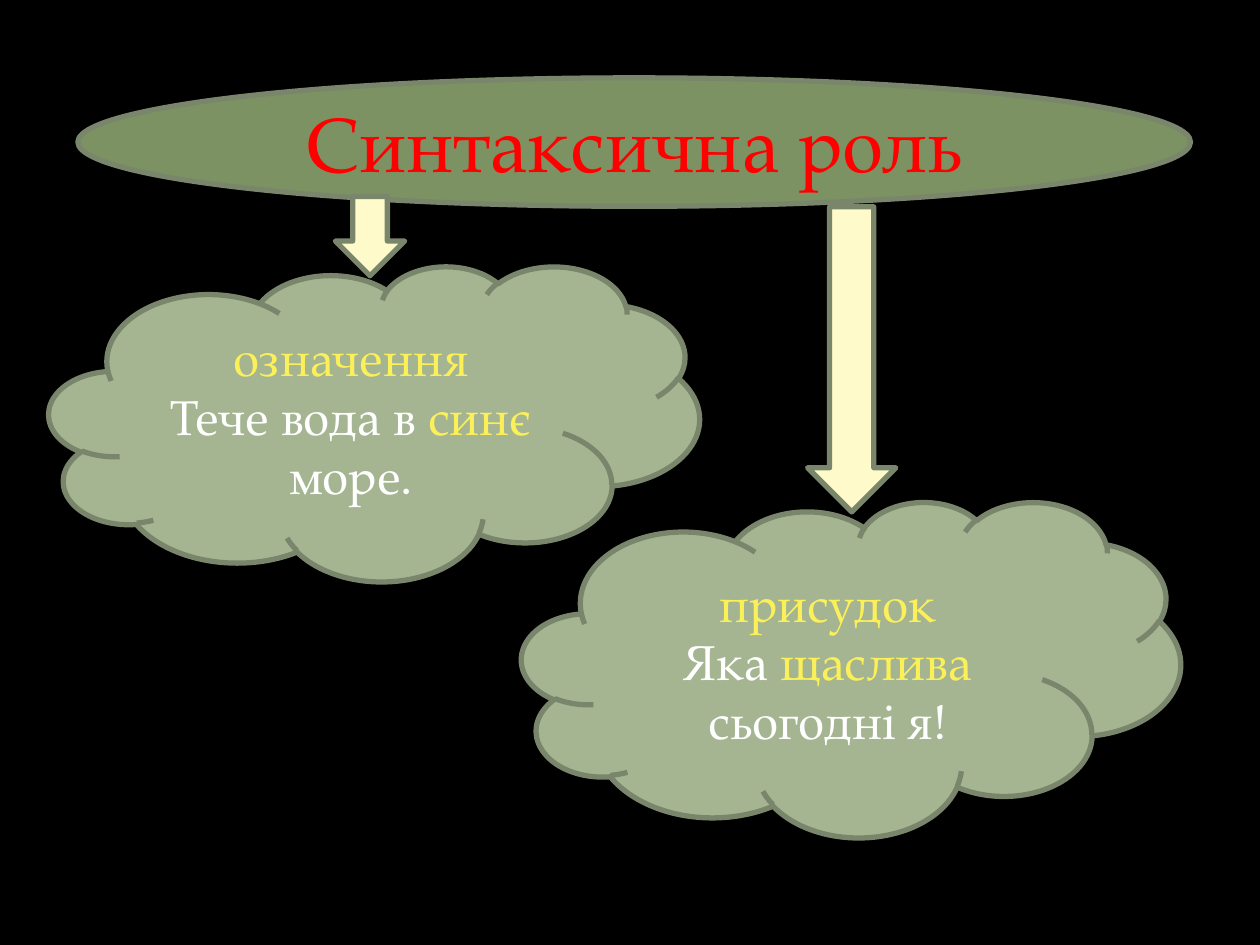
from pptx import Presentation
from pptx.dml.color import RGBColor
from pptx.enum.shapes import MSO_SHAPE as Preset
from pptx.enum.text import MSO_ANCHOR as Anchor, PP_ALIGN as Align
from pptx.util import Cm, Pt

FONT = "TeX Gyre Pagella"
BLACK = RGBColor(0x00, 0x00, 0x00)
WHITE = RGBColor(0xFF, 0xFF, 0xFF)
RED = RGBColor(0xFF, 0x00, 0x00)
YELLOW = RGBColor(0xFC, 0xF0, 0x59)
CREAM = RGBColor(0xFE, 0xFA, 0xC9)
SAGE = RGBColor(0xA5, 0xB5, 0x92)
MOSS = RGBColor(0x7D, 0x92, 0x63)
OUTLINE = RGBColor(0x7A, 0x86, 0x6C)


def add_outlined(slide, preset, box, fill):
    figure = slide.shapes.add_shape(preset, *(Cm(length) for length in box))
    figure.shadow.inherit = False
    figure.fill.solid()
    figure.fill.fore_color.rgb = fill
    figure.line.color.rgb = OUTLINE
    figure.line.width = Pt(3)
    return figure


def write_lines(figure, lines, size):
    frame = figure.text_frame
    frame.word_wrap = True
    frame.vertical_anchor = Anchor.MIDDLE
    for index, pieces in enumerate(lines):
        line = frame.add_paragraph() if index else frame.paragraphs[0]
        line.alignment = Align.CENTER
        for words, color in pieces:
            run = line.add_run()
            run.text = words
            run.font.name = FONT
            run.font.size = Pt(size)
            run.font.color.rgb = color


def add_heading(slide, box, words):
    heading = add_outlined(slide, Preset.OVAL, box, MOSS)
    write_lines(heading, [[(words, RED)]], 44)


def add_role_cloud(slide, box, role, example):
    cloud = add_outlined(slide, Preset.CLOUD, box, SAGE)
    write_lines(cloud, [[(role, YELLOW)], example], 28)


def add_arrow(slide, box):
    add_outlined(slide, Preset.DOWN_ARROW, box, CREAM)


def main():
    deck = Presentation()
    deck.slide_width, deck.slide_height = Cm(25.4), Cm(19.05)
    slide = deck.slides.add_slide(deck.slide_layouts[6])
    slide.background.fill.solid()
    slide.background.fill.fore_color.rgb = BLACK

    add_heading(slide, (1.57, 1.57, 22.43, 2.59), "Синтаксична роль")
    add_role_cloud(slide, (0.99, 5.36, 13.11, 6.35), "означення",
                   [("Тече вода в ", WHITE), ("синє", YELLOW), (" море.", WHITE)])
    add_role_cloud(slide, (10.52, 10.11, 13.28, 6.76), "присудок",
                   [("Яка ", WHITE), ("щаслива ", YELLOW), ("сьогодні я!", WHITE)])
    add_arrow(slide, (6.76, 3.96, 1.4, 1.6))
    add_arrow(slide, (16.28, 4.17, 1.78, 6.15))

    deck.save("out.pptx")


if __name__ == "__main__":
    main()
